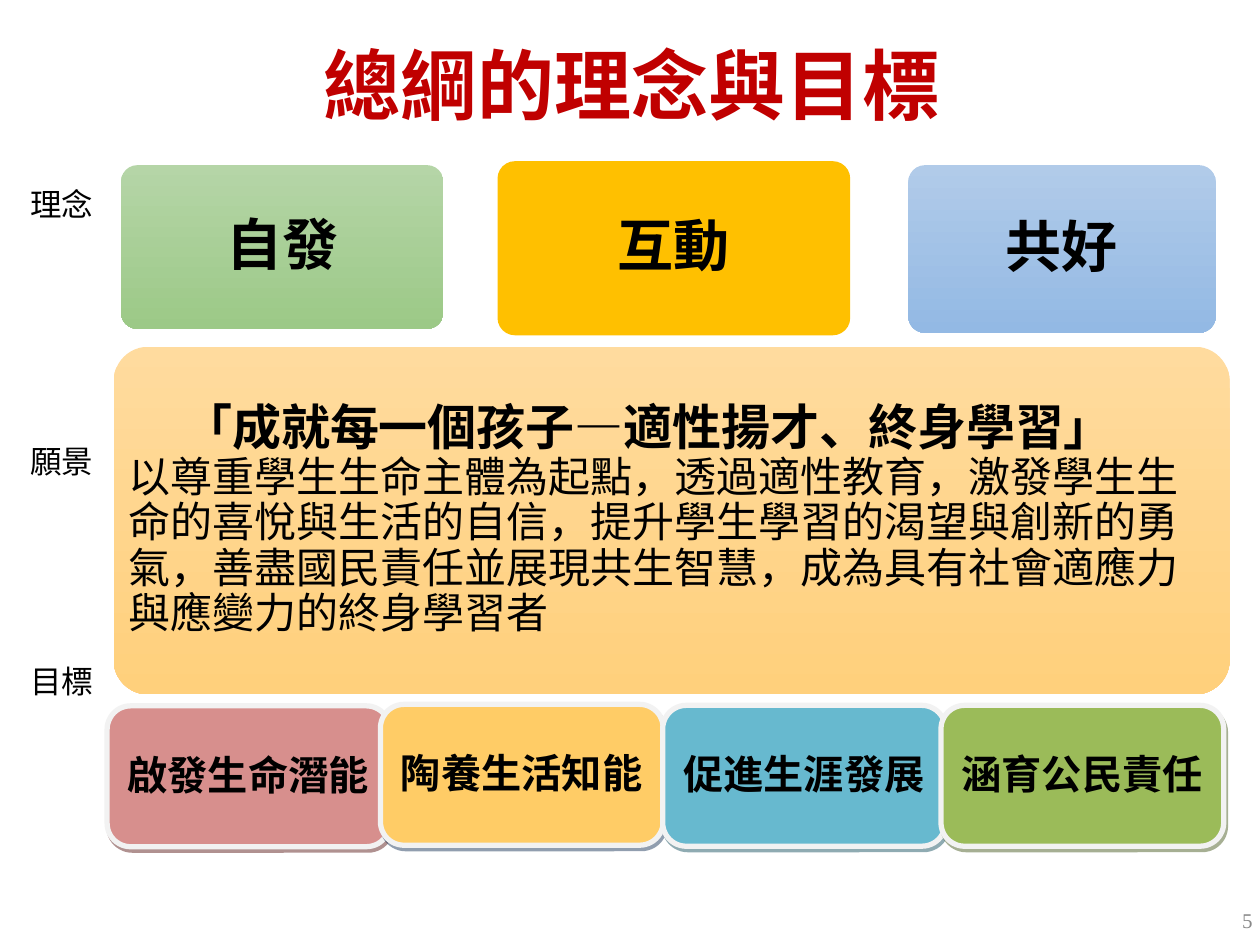
import dataclasses

import lxml.etree
import pptx
import pptx.dml.color
import pptx.enum.shapes
import pptx.enum.text
import pptx.oxml
import pptx.oxml.ns
import pptx.util

Cm = pptx.util.Cm
Pt = pptx.util.Pt
ALIGN = pptx.enum.text.PP_ALIGN
ANCHOR = pptx.enum.text.MSO_ANCHOR


@dataclasses.dataclass(frozen=True)
class Theme:
    font: str = "Noto Sans CJK SC"
    number_font: str = "Times New Roman"
    ink: str = "000000"
    title: str = "C00000"
    muted: str = "898989"
    border: str = "F2F2F2"
    vision: tuple = ("FFDB9E", "FFD07C")
    green: tuple = ("B5D5A7", "9CC987")
    gold: tuple = ("FFC000",)
    blue: tuple = ("B1CBE9", "93B9E4")
    title_size: int = 44
    idea_size: int = 32
    headline_size: int = 28
    body_size: int = 24
    goal_size: int = 23
    label_size: int = 18
    number_size: int = 12


class SlideBuilder:
    """Hold the theme and the current page, and draw each kind of element."""

    def __init__(self, deck, theme):
        self.theme = theme
        self.page = deck.slides.add_slide(deck.slide_layouts[5])

    def color(self, value):
        return pptx.dml.color.RGBColor.from_string(value)

    def set_text(self, para, text, size, bold=False, color=None, font=None,
                 align=ALIGN.LEFT, spacing=None):
        para.text = text
        para.alignment = align
        para.line_spacing = spacing
        para.font.size = Pt(size)
        para.font.bold = bold
        para.font.color.rgb = self.color(color or self.theme.ink)
        para.font.name = font or self.theme.font
        defaults = para._p.pPr.find(pptx.oxml.ns.qn("a:defRPr"))
        lxml.etree.SubElement(defaults, pptx.oxml.ns.qn("a:ea"),
                              typeface=font or self.theme.font)

    def title(self, text, place):
        box = self.page.shapes.title
        box.left, box.top, box.width, box.height = map(Cm, place)
        box.text_frame.vertical_anchor = ANCHOR.MIDDLE
        self.set_text(box.text_frame.paragraphs[0], text, self.theme.title_size,
                      True, self.theme.title, align=ALIGN.CENTER, spacing=0.9)

    def text_box(self, place, anchor=ANCHOR.TOP):
        box = self.page.shapes.add_textbox(*map(Cm, place))
        box.text_frame.word_wrap = True
        box.text_frame.vertical_anchor = anchor
        return box.text_frame

    def panel(self, place, fill, rounding=0.1):
        box = self.page.shapes.add_shape(
            pptx.enum.shapes.MSO_SHAPE.ROUNDED_RECTANGLE, *map(Cm, place))
        box.adjustments[0] = rounding
        box.shadow.inherit = False
        box.line.fill.background()
        if len(fill) == 1:
            box.fill.solid()
            box.fill.fore_color.rgb = self.color(fill[0])
        else:
            box.fill.gradient()
            box.fill.gradient_angle = 270
            for position, (stop, value) in enumerate(zip(box.fill.gradient_stops, fill)):
                stop.position = position
                stop.color.rgb = self.color(value)
        frame = box.text_frame
        frame.word_wrap = True
        frame.vertical_anchor = ANCHOR.MIDDLE
        frame.margin_left = frame.margin_right = Cm(0.1)
        return box

    def idea(self, text, place, fill):
        box = self.panel(place, fill)
        self.set_text(box.text_frame.paragraphs[0], text, self.theme.idea_size, True,
                      align=ALIGN.CENTER, spacing=0.9)

    def vision(self, headline, body, place):
        frame = self.panel(place, self.theme.vision).text_frame
        first = frame.paragraphs[0]
        self.set_text(first, headline, self.theme.headline_size, True, spacing=0.9)
        first._p.pPr.set("marL", str(Cm(1.1)))
        self.set_text(frame.add_paragraph(), body, self.theme.body_size, spacing=0.9)

    def goal(self, text, place, fill, shade):
        box = self.panel(place, (fill,), 0.167)
        box.line.color.rgb = self.color(self.theme.border)
        box.line.width = Pt(3)
        effects = box._element.spPr.find(pptx.oxml.ns.qn("a:effectLst"))
        effects.append(pptx.oxml.parse_xml(
            f'<a:outerShdw {pptx.oxml.ns.nsdecls("a")} blurRad="0" dist="{Pt(2.2)}" '
            f'dir="{63 * 60000}" algn="ctr" rotWithShape="0"><a:srgbClr val="{shade}">'
            '<a:alpha val="50000"/></a:srgbClr></a:outerShdw>'))
        self.set_text(box.text_frame.paragraphs[0], text, self.theme.goal_size, True,
                      align=ALIGN.CENTER, spacing=0.96)

    def labels(self, entries, place):
        frame = self.text_box(place)
        for index, (text, gap) in enumerate(entries):
            para = frame.add_paragraph() if index else frame.paragraphs[0]
            self.set_text(para, text, self.theme.label_size)
            para.space_before = Pt(gap)

    def page_number(self, text, place):
        frame = self.text_box(place, ANCHOR.MIDDLE)
        self.set_text(frame.paragraphs[0], text, self.theme.number_size,
                      color=self.theme.muted, font=self.theme.number_font, align=ALIGN.RIGHT)


def main():
    deck = pptx.Presentation()
    deck.slide_width, deck.slide_height = Cm(25.4), Cm(19.05)
    theme = Theme()
    builder = SlideBuilder(deck, theme)

    builder.title("總綱的理念與目標", (1.3, 0.81, 22.86, 2.01))
    builder.vision(
        "「成就每一個孩子—適性揚才、終身學習」",
        "以尊重學生生命主體為起點，透過適性教育，激發學生生命的喜悅與生活的自信，"
        "提升學生學習的渴望與創新的勇氣，善盡國民責任並展現共生智慧，"
        "成為具有社會適應力與應變力的終身學習者",
        (2.29, 6.99, 22.5, 7.01))

    ideas = [
        ("自發", (2.44, 3.33, 6.5, 3.3), theme.green),
        ("互動", (10.03, 3.25, 7.11, 3.51), theme.gold),
        ("共好", (18.31, 3.33, 6.2, 3.38), theme.blue),
    ]
    for text, place, fill in ideas:
        builder.idea(text, place, fill)

    builder.page_number("5", (19.58, 18.03, 5.92, 1.02))

    goals = [
        ("啟發生命潛能", 2.16, 14.23, "D78F8D", "622423"),
        ("陶養生活知能", 7.67, 14.2, "FFCC66", "243F60"),
        ("促進生涯發展", 13.36, 14.22, "67B9CF", "205867"),
        ("涵育公民責任", 18.97, 14.22, "9BBB59", "4E6128"),
    ]
    for text, left, top, fill, shade in goals:
        builder.goal(text, (left, top, 5.7, 2.84), fill, shade)

    builder.labels([("理念", 0), ("願景", 125), ("目標", 104)], (0.36, 3.61, 1.9, 11.02))
    deck.save("out.pptx")


if __name__ == "__main__":
    main()
